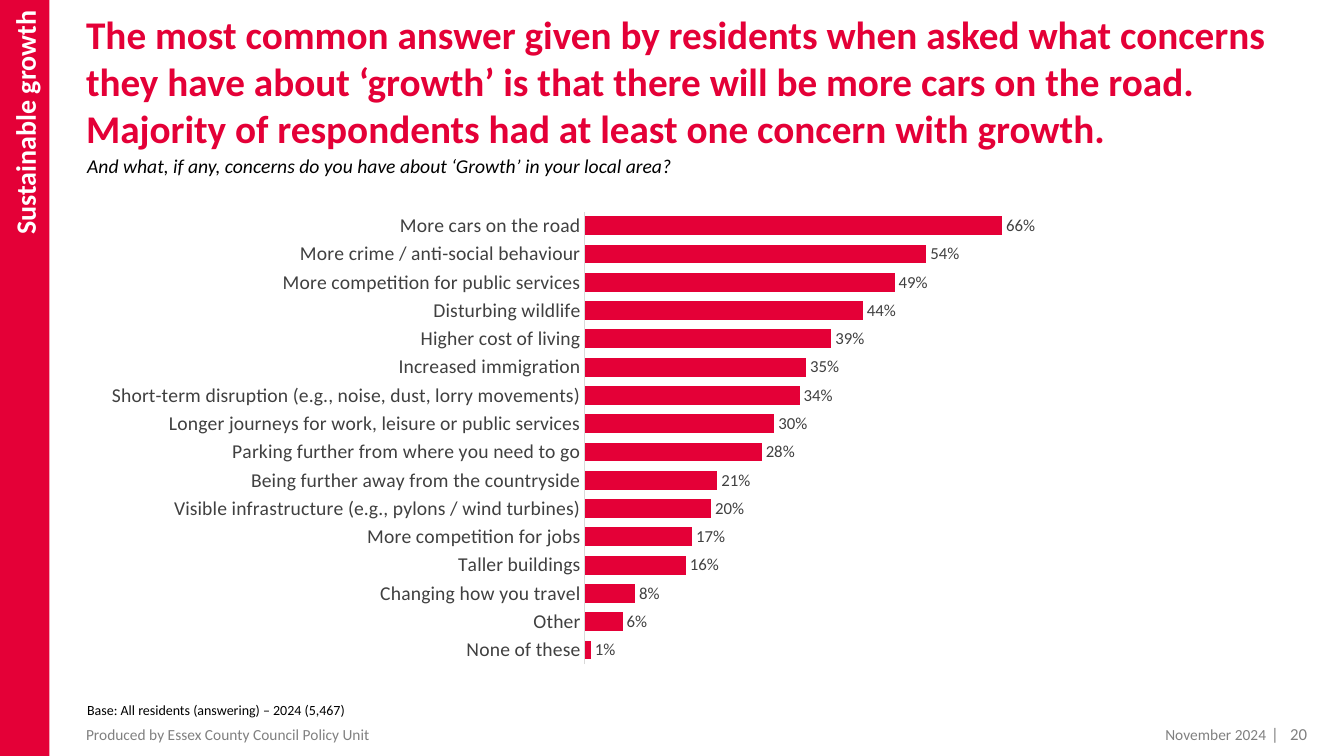
from lxml import etree
from pptx import Presentation
from pptx import util as u
from pptx.chart.data import CategoryChartData
from pptx.dml.color import RGBColor
from pptx.enum import chart as charts, shapes, text
from pptx.oxml import ns

PX = 9525
FONT = "Calibri"
RED, WHITE, BLACK = "E40037", "FFFFFF", "000000"
DARK_GREY, GREY, PALE_GREY = "404040", "808080", "D9D9D9"
LEFT, RIGHT = text.PP_ALIGN.LEFT, text.PP_ALIGN.RIGHT
TOP, MIDDLE = text.MSO_ANCHOR.TOP, text.MSO_ANCHOR.MIDDLE

CONCERNS = [
    ("More cars on the road", 0.66),
    ("More crime / anti-social behaviour", 0.54),
    ("More competition for public services", 0.49),
    ("Disturbing wildlife", 0.44),
    ("Higher cost of living", 0.39),
    ("Increased immigration", 0.35),
    ("Short-term disruption (e.g., noise, dust, lorry movements)", 0.34),
    ("Longer journeys for work, leisure or public services", 0.30),
    ("Parking further from where you need to go", 0.28),
    ("Being further away from the countryside", 0.21),
    ("Visible infrastructure (e.g., pylons / wind turbines)", 0.20),
    ("More competition for jobs", 0.17),
    ("Taller buildings", 0.16),
    ("Changing how you travel", 0.08),
    ("Other", 0.06),
    ("None of these", 0.01),
]


def px(*lengths):
    return [u.Emu(length * PX) for length in lengths]


def color(value):
    return RGBColor.from_string(value)


def style_font(font, size, value, bold=False, italic=False):
    font.name = FONT
    font.size = u.Pt(size)
    font.bold = bold
    font.italic = italic
    font.color.rgb = color(value)


def write(shape, content, size, value, bold=False, italic=False,
          align=LEFT, anchor=TOP, insets=(10, 5, 10, 5)):
    frame = shape.text_frame
    frame.word_wrap = True
    frame.auto_size = text.MSO_AUTO_SIZE.NONE
    frame.vertical_anchor = anchor
    (frame.margin_left, frame.margin_top,
     frame.margin_right, frame.margin_bottom) = px(*insets)
    paragraph = frame.paragraphs[0]
    paragraph.alignment = align
    for part in content if isinstance(content, list) else [content]:
        paragraph.add_run().text = part
    style_font(paragraph.font, size, value, bold, italic)
    return paragraph


def add_text(slide, box, content, size, value, **options):
    return write(slide.shapes.add_textbox(*px(*box)), content, size, value, **options)


def add_sidebar(slide, box):
    sidebar = slide.shapes.add_shape(shapes.MSO_SHAPE.RECTANGLE, *px(*box))
    sidebar.shadow.inherit = False
    sidebar.fill.solid()
    sidebar.fill.fore_color.rgb = color(RED)
    sidebar.line.fill.background()
    write(sidebar, "Sustainable growth", 20, WHITE, bold=True, align=RIGHT,
          anchor=MIDDLE, insets=(10, 10, 10, 5))
    sidebar.text_frame._txBody.bodyPr.set("vert", "vert270")


def add_heading(slide, box):
    left, top, width, height = box
    title = slide.shapes.title
    title.left, title.top, title.width, title.height = px(left, top, width, height)
    write(title, "The most common answer given by residents when asked what concerns "
          "they have about ‘growth’ is that there will be more cars on the road. "
          "Majority of respondents had at least one concern with growth.",
          28, RED, bold=True, insets=(10, 5, 10, 0))
    add_text(slide, (left + 1, top + height + 2, width - 17, 33),
             "And what, if any, concerns do you have about ‘Growth’ in your local area?",
             14, BLACK, italic=True)


def set_plot_layout(chart, **fractions):
    plot_area = chart._chartSpace.chart.plotArea
    for old in plot_area.findall(ns.qn("c:layout")):
        plot_area.remove(old)
    layout = etree.Element(ns.qn("c:layout"))
    manual = etree.SubElement(layout, ns.qn("c:manualLayout"))
    settings = {"layoutTarget": "inner", "xMode": "edge", "yMode": "edge", **fractions}
    for name, value in settings.items():
        etree.SubElement(manual, ns.qn(f"c:{name}")).set("val", str(value))
    plot_area.insert(0, layout)


def add_concerns_chart(slide, box):
    data = CategoryChartData(number_format="0%")
    data.categories = [concern for concern, share in CONCERNS]
    data.add_series("Series 1", [share for concern, share in CONCERNS])
    chart = slide.shapes.add_chart(
        charts.XL_CHART_TYPE.BAR_CLUSTERED, *px(*box), data).chart
    chart.has_legend = False
    chart.has_title = False
    style_font(chart.font, 10, BLACK)
    set_plot_layout(chart, x=0.486, y=0.054, w=0.514, h=0.946)

    categories = chart.category_axis
    categories.reverse_order = True
    categories.major_tick_mark = charts.XL_TICK_MARK.NONE
    categories.format.line.color.rgb = color(PALE_GREY)
    categories.format.line.width = u.Pt(0.75)
    style_font(categories.tick_labels.font, 14, DARK_GREY)

    values = chart.value_axis
    values.minimum_scale = 0
    values.maximum_scale = 0.8
    values.has_major_gridlines = False
    values.visible = False

    plot = chart.plots[0]
    plot.gap_width = 50
    plot.vary_by_categories = False
    bars = plot.series[0]
    bars.format.fill.solid()
    bars.format.fill.fore_color.rgb = color(RED)
    labels = bars.data_labels
    labels.show_value = True
    labels.number_format = "0%"
    labels.number_format_is_linked = False
    labels.position = charts.XL_LABEL_POSITION.OUTSIDE_END
    style_font(labels.font, 12, DARK_GREY)


def add_footer(slide, box):
    left, top, width, height = box
    right = left + width
    line_top = top + 29
    add_text(slide, (left, top, 360, 26),
             "Base: All residents (answering) – 2024 (5,467)", 10, BLACK)
    add_text(slide, (left, line_top, 628, 14),
             "Produced by Essex County Council Policy Unit", 11, GREY,
             anchor=MIDDLE, insets=(9, 5, 10, 5))
    add_text(slide, (right - 259, line_top - 6, 230, 14), "November 2024",
             11, GREY, align=RIGHT)
    page = add_text(slide, (right - 82, line_top, 82, 14), ["|", " ", "20"],
                    12, GREY, align=RIGHT, anchor=MIDDLE, insets=(10, 5, 0, 5))
    page.runs[1]._r.get_or_add_rPr().set("spc", "540")


def main():
    presentation = Presentation()
    presentation.slide_width, presentation.slide_height = px(1280, 720)
    slide = presentation.slides.add_slide(presentation.slide_layouts[5])
    add_concerns_chart(slide, (101, 177, 938, 456))
    add_sidebar(slide, (0, 0, 47, 720))
    add_heading(slide, (72, 5, 1176, 135))
    add_footer(slide, (73, 663, 1172, 43))
    presentation.save("out.pptx")


if __name__ == "__main__":
    main()
